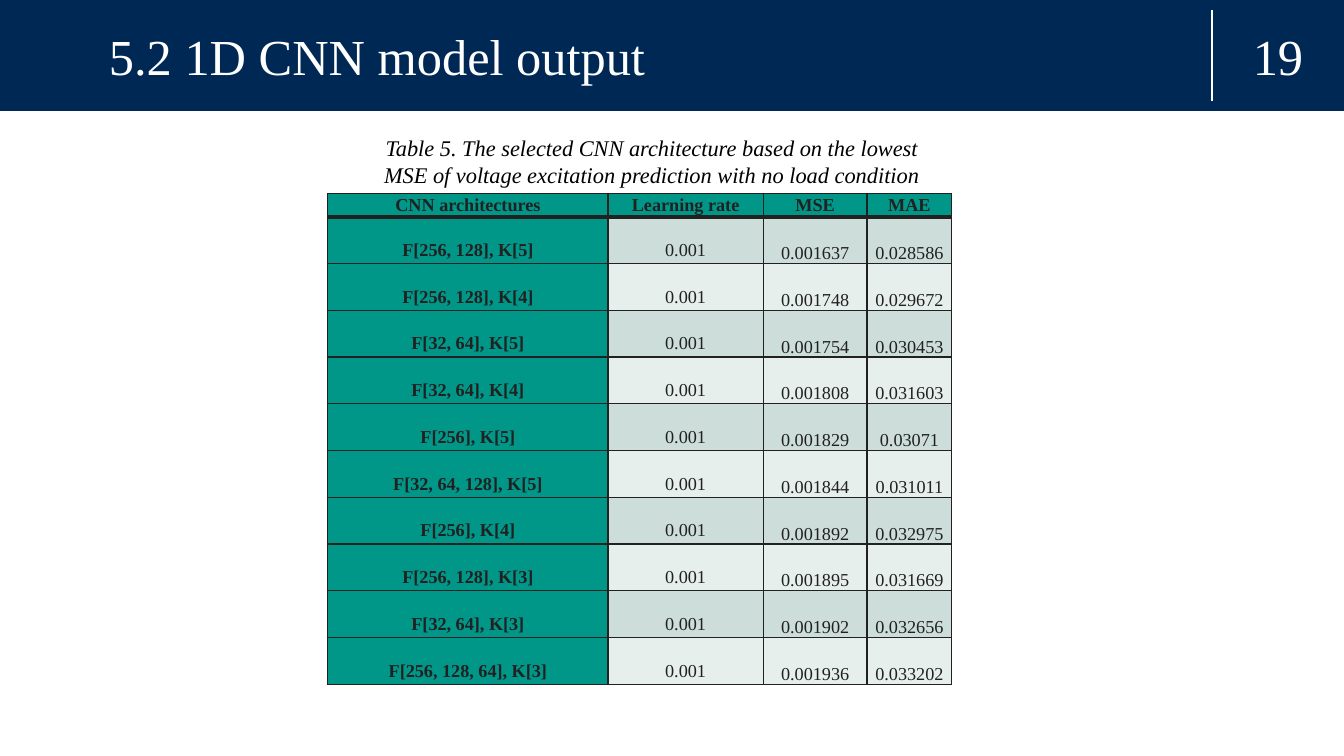
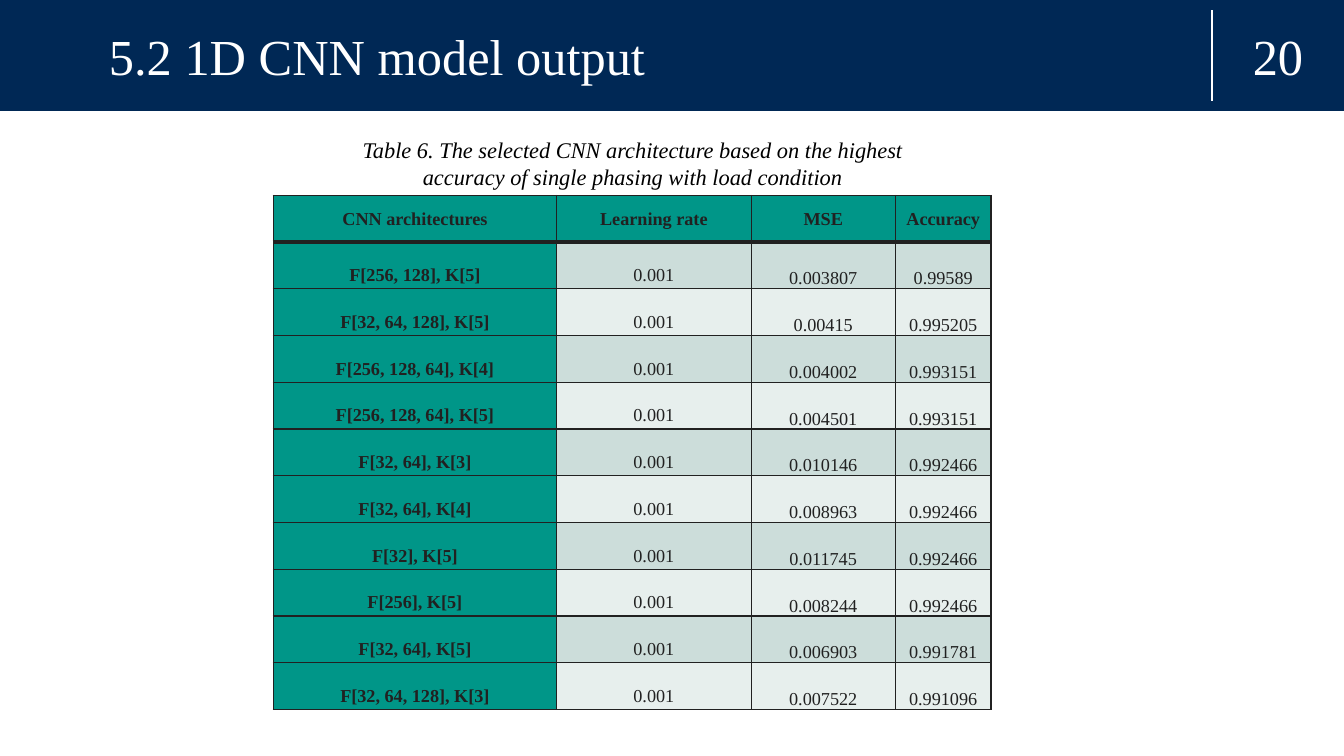
from dataclasses import dataclass

from lxml.etree import SubElement
from pptx import Presentation
from pptx.dml.color import RGBColor
from pptx.enum.shapes import MSO_CONNECTOR, MSO_SHAPE
from pptx.enum.text import MSO_ANCHOR, MSO_AUTO_SIZE, PP_ALIGN
from pptx.oxml.ns import qn
from pptx.util import Inches, Pt

COLORS = {
    "dark": "212121",
    "white": "FFFFFF",
    "navy": "002855",
    "teal": "009688",
    "odd_row": "CCDDDA",
    "even_row": "E7EFED",
    "black": "000000",
}
FONT = "Times New Roman"
TITLE = "5.2 1D CNN model output"
LEARNING_RATE = "0.001"
TITLE_ONLY_LAYOUT = 5


@dataclass(frozen=True)
class Box:
    left: float
    top: float
    width: float
    height: float

    def lengths(self) -> tuple:
        return tuple(Inches(v) for v in (self.left, self.top, self.width, self.height))


@dataclass(frozen=True)
class TextStyle:
    size: float
    color: str
    bold: bool = False
    italic: bool = False
    align: PP_ALIGN = PP_ALIGN.CENTER


@dataclass(frozen=True)
class Result:
    architecture: str
    mse: str
    score: str


@dataclass(frozen=True)
class ResultSlide:
    number: int
    caption: str
    caption_box: Box
    table_box: Box
    column_widths: tuple[float, ...]
    header_height: float
    score_name: str
    results: tuple[Result, ...]


HEADING = TextStyle(36, "white", align=PP_ALIGN.LEFT)
PAGE_NUMBER = TextStyle(36, "white")
CAPTION = TextStyle(16, "black", italic=True)
CELL = TextStyle(13, "dark")
CELL_BOLD = TextStyle(13, "dark", bold=True)

SLIDES = (
    ResultSlide(
        19,
        "Table 5. The selected CNN architecture based on the lowest MSE of "
        "voltage excitation prediction with no load condition",
        Box(3.5, 1.28, 5.93, 0.64),
        Box(3.25, 1.92, 6.19, 4.87),
        (2.78, 1.54, 1.03, 0.84),
        0.23,
        "MAE",
        (
            Result("F[256, 128], K[5]", "0.001637", "0.028586"),
            Result("F[256, 128], K[4]", "0.001748", "0.029672"),
            Result("F[32, 64], K[5]", "0.001754", "0.030453"),
            Result("F[32, 64], K[4]", "0.001808", "0.031603"),
            Result("F[256], K[5]", "0.001829", "0.03071"),
            Result("F[32, 64, 128], K[5]", "0.001844", "0.031011"),
            Result("F[256], K[4]", "0.001892", "0.032975"),
            Result("F[256, 128], K[3]", "0.001895", "0.031669"),
            Result("F[32, 64], K[3]", "0.001902", "0.032656"),
            Result("F[256, 128, 64], K[3]", "0.001936", "0.033202"),
        ),
    ),
    ResultSlide(
        20,
        "Table 6. The selected CNN architecture based on the highest "
        "accuracy of single phasing with load condition",
        Box(3.31, 1.3, 5.93, 0.64),
        Box(2.71, 1.94, 7.12, 5.1),
        (2.81, 1.93, 1.43, 0.95),
        0.46,
        "Accuracy",
        (
            Result("F[256, 128], K[5]", "0.003807", "0.99589"),
            Result("F[32, 64, 128], K[5]", "0.00415", "0.995205"),
            Result("F[256, 128, 64], K[4]", "0.004002", "0.993151"),
            Result("F[256, 128, 64], K[5]", "0.004501", "0.993151"),
            Result("F[32, 64], K[3]", "0.010146", "0.992466"),
            Result("F[32, 64], K[4]", "0.008963", "0.992466"),
            Result("F[32], K[5]", "0.011745", "0.992466"),
            Result("F[256], K[5]", "0.008244", "0.992466"),
            Result("F[32, 64], K[5]", "0.006903", "0.991781"),
            Result("F[32, 64, 128], K[3]", "0.007522", "0.991096"),
        ),
    ),
)


def rgb(name: str) -> RGBColor:
    return RGBColor.from_string(COLORS[name])


def write(frame, text: str, style: TextStyle) -> None:
    paragraph = frame.paragraphs[0]
    paragraph.alignment = style.align
    run = paragraph.add_run()
    run.text = text
    run.font.name = FONT
    run.font.size = Pt(style.size)
    run.font.bold = style.bold
    run.font.italic = style.italic
    run.font.color.rgb = rgb(style.color)


def add_band(slide, box: Box, color: str, line_width: float) -> None:
    band = slide.shapes.add_shape(MSO_SHAPE.RECTANGLE, *box.lengths())
    band.shadow.inherit = False
    band.fill.solid()
    band.fill.fore_color.rgb = rgb(color)
    band.line.color.rgb = rgb(color)
    band.line.width = Pt(line_width)


def add_text(slide, box: Box, text: str, style: TextStyle, anchor: MSO_ANCHOR) -> None:
    frame = slide.shapes.add_textbox(*box.lengths()).text_frame
    frame.word_wrap = True
    frame.vertical_anchor = anchor
    write(frame, text, style)


def add_frame(slide, number: int) -> None:
    """Draw the page, header band, title and page number."""
    add_band(slide, Box(0, 1.1, 13.33, 6.4), "white", 2)
    add_band(slide, Box(0, 0, 13.33, 1.1), "navy", 0.75)

    divider = slide.shapes.add_connector(
        MSO_CONNECTOR.STRAIGHT, Inches(12.02), Inches(1), Inches(12.02), Inches(0.1)
    )
    divider.line.color.rgb = rgb("white")
    divider.line.width = Pt(1.5)
    SubElement(divider.element.spPr, qn("a:effectLst"))

    add_text(slide, Box(12.02, 0.1, 1.31, 0.89), str(number), PAGE_NUMBER, MSO_ANCHOR.MIDDLE)

    # The title goes in front of the header band
    title = slide.shapes.title
    slide.shapes.element.append(title.element)
    title.left, title.top, title.width, title.height = Box(0.73, 0.1, 11.08, 0.89).lengths()
    frame = title.text_frame
    frame.auto_size = MSO_AUTO_SIZE.NONE
    frame.vertical_anchor = MSO_ANCHOR.MIDDLE
    frame.margin_left = Inches(0.35)
    write(frame, TITLE, HEADING)


def set_borders(cell, top: float, bottom: float) -> None:
    properties = cell._tc.get_or_add_tcPr()
    for side, width in (("L", 1), ("R", 1), ("T", top), ("B", bottom)):
        line = SubElement(properties, qn(f"a:ln{side}"), w=str(Pt(width)))
        fill = SubElement(line, qn("a:solidFill"))
        SubElement(fill, qn("a:srgbClr"), val=COLORS["dark"])


def format_cell(cell, text: str, row: int, column: int) -> None:
    is_header = row == 0
    is_teal = is_header or column == 0
    set_borders(cell, top=3 if row == 1 else 1, bottom=3 if is_header else 1)
    cell.fill.solid()
    cell.fill.fore_color.rgb = rgb("teal" if is_teal else "odd_row" if row % 2 else "even_row")

    cell.margin_left = cell.margin_right = Inches(0.07)
    cell.margin_top = cell.margin_bottom = 0
    if is_header:
        cell.vertical_anchor = MSO_ANCHOR.MIDDLE
    elif column < 2:
        cell.vertical_anchor = MSO_ANCHOR.TOP
        cell.margin_top = Inches(0.22)
    else:
        cell.vertical_anchor = MSO_ANCHOR.BOTTOM
    write(cell.text_frame, text, CELL_BOLD if is_teal else CELL)
    cell.text_frame.paragraphs[0].line_spacing = 1.07


def add_results(slide, content: ResultSlide) -> None:
    rows = [("CNN architectures", "Learning rate", "MSE", content.score_name)]
    rows += [(r.architecture, LEARNING_RATE, r.mse, r.score) for r in content.results]
    box = content.table_box
    table = slide.shapes.add_table(len(rows), len(rows[0]), *box.lengths()).table

    for column, width in zip(table.columns, content.column_widths):
        column.width = Inches(width)
    result_height = (box.height - content.header_height) / len(content.results)
    for i, texts in enumerate(rows):
        table.rows[i].height = Inches(result_height if i else content.header_height)
        for j, text in enumerate(texts):
            format_cell(table.cell(i, j), text, i, j)


def main() -> None:
    prs = Presentation()
    prs.slide_width, prs.slide_height = Inches(13.33), Inches(7.5)
    background = prs.slide_master.background.fill
    background.solid()
    background.fore_color.rgb = rgb("dark")

    for content in SLIDES:
        slide = prs.slides.add_slide(prs.slide_layouts[TITLE_ONLY_LAYOUT])
        add_frame(slide, content.number)
        add_results(slide, content)
        add_text(slide, content.caption_box, content.caption, CAPTION, MSO_ANCHOR.TOP)

    prs.save("out.pptx")


if __name__ == "__main__":
    main()
